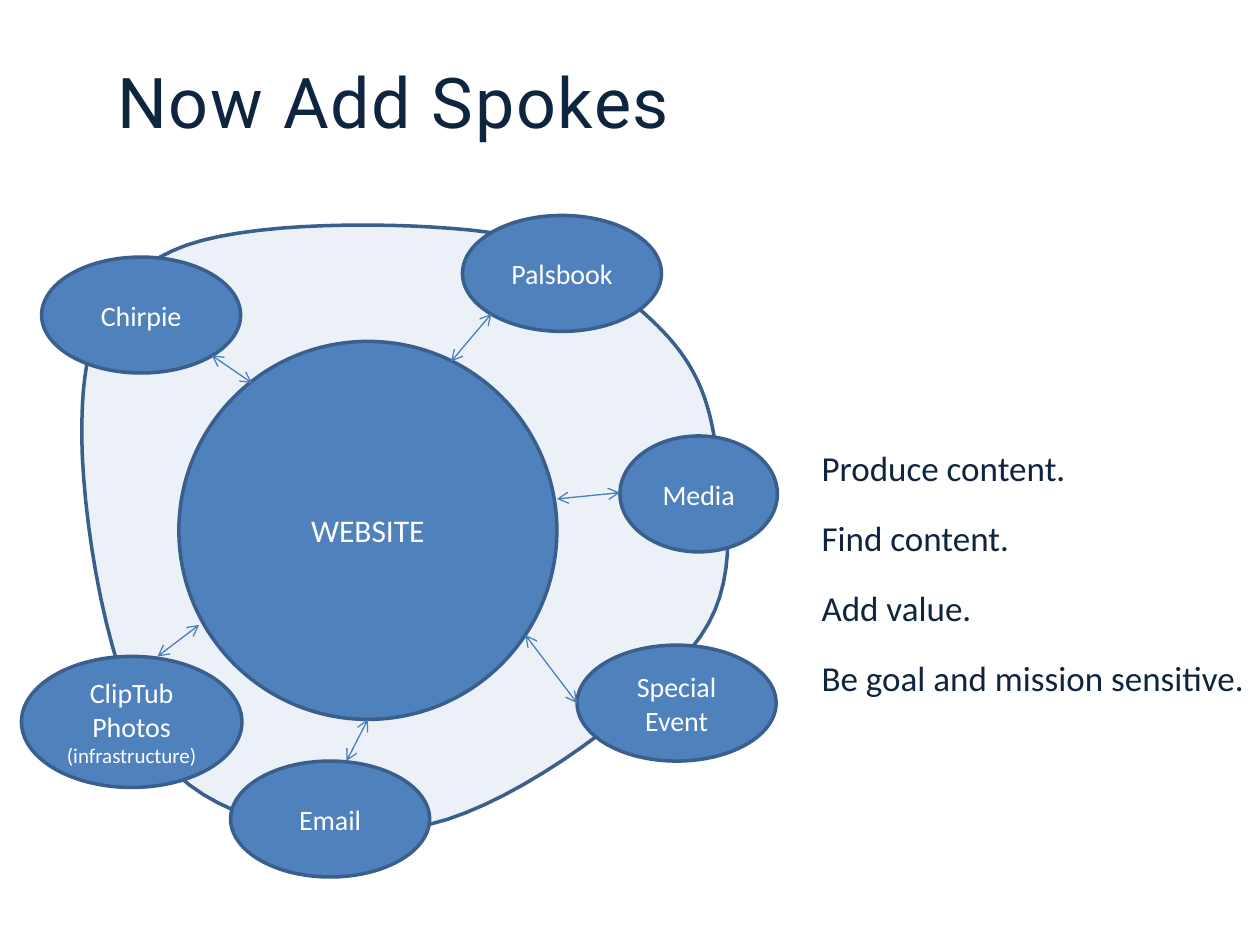
from dataclasses import dataclass

from lxml import etree
from pptx import Presentation
from pptx.dml.color import RGBColor
from pptx.enum.shapes import MSO_CONNECTOR, MSO_SHAPE
from pptx.enum.text import MSO_ANCHOR, MSO_AUTO_SIZE, PP_ALIGN
from pptx.oxml.ns import qn
from pptx.util import Pt

OVAL = MSO_SHAPE.OVAL
LINE = MSO_CONNECTOR.STRAIGHT
MIDDLE, TOP = MSO_ANCHOR.MIDDLE, MSO_ANCHOR.TOP
CENTER, LEFT = PP_ALIGN.CENTER, PP_ALIGN.LEFT
FIXED = MSO_AUTO_SIZE.NONE

SCALE = 9144  # EMU per px, 100 px to the inch
BLUE, EDGE, SPOKE, PALE = "4F81BD", "3A5F8C", "4B7EBC", "DCE6F2"
NAVY, WHITE = "0F243E", "FFFFFF"
STEPS = 16  # straight pieces per curve


@dataclass
class Node:
    box: tuple[int, int, int, int]
    lines: tuple[tuple[str, int], ...]  # text and size of each paragraph


@dataclass
class Spoke:
    start: tuple[int, int]
    end: tuple[int, int]


NODES = [
    Node((33, 204, 158, 92), (("Chirpie", 16),)),
    Node((367, 171, 158, 92), (("Palsbook", 16),)),
    Node((492, 346, 125, 92), (("Media", 16),)),
    Node((458, 512, 158, 92), (("Special Event", 16),)),
    Node((17, 521, 175, 104), (("ClipTub\nPhotos", 16), ("(infrastructure)", 12))),
    Node((142, 271, 300, 300), (("WEBSITE", 18),)),
    Node((183, 604, 158, 92), (("Email", 16),)),
]

SPOKES = [
    Spoke((390, 249), (358, 287)),
    Spoke((168, 282), (200, 304)),
    Spoke((492, 391), (442, 396)),
    Spoke((458, 558), (417, 504)),
    Spoke((275, 604), (292, 571)),
    Spoke((125, 521), (158, 496)),
]

# Rim: a start point, then two handles and an end point per curve
START = (137, 199)
CURVES = [
    ((190, 174), (323, 176), (385, 184)),
    ((446, 191), (476, 219), (506, 244)),
    ((536, 270), (556, 294), (565, 337)),
    ((573, 381), (593, 452), (556, 505)),
    ((519, 558), (413, 637), (342, 654)),
    ((271, 671), (177, 658), (131, 605)),
    ((85, 551), (63, 402), (65, 334)),
    ((66, 267), (83, 224), START),
]

ADVICE = ["Produce content.", "Find content.", "Add value.",
          "Be goal and mission sensitive."]


def px(*vals: float) -> list[int]:
    return [round(v * SCALE) for v in vals]


def rgb(code: str) -> RGBColor:
    return RGBColor.from_string(code)


def paint(shape, fill: str) -> None:
    shape.shadow.inherit = False
    shape.fill.solid()
    shape.fill.fore_color.rgb = rgb(fill)
    shape.line.color.rgb = rgb(EDGE)
    shape.line.width = Pt(2)


def add_run(para, text: str, size: int, color: str, face: str = "Calibri"):
    run = para.add_run()
    run.text = text
    run.font.size = Pt(size)
    run.font.name = face
    run.font.color.rgb = rgb(color)
    return run


def next_para(frame, index: int):
    return frame.add_paragraph() if index else frame.paragraphs[0]


def place(shape, box: tuple[int, int, int, int], anchor):
    shape.left, shape.top, shape.width, shape.height = px(*box)
    frame = shape.text_frame
    frame.word_wrap = True
    frame.auto_size = FIXED
    frame.vertical_anchor = anchor
    return frame


def bend(p0, p1, p2, p3) -> list[list[int]]:
    """Points along one cubic curve, without its start."""
    points = []
    for step in range(1, STEPS + 1):
        t = step / STEPS
        u = 1 - t
        points.append(px(*(u**3 * a + 3 * u * u * t * b + 3 * u * t * t * c + t**3 * d
                           for a, b, c, d in zip(p0, p1, p2, p3))))
    return points


def draw_rim(slide) -> None:
    path = slide.shapes.build_freeform(*px(*START), scale=1.0)
    last, points = START, []
    for curve in CURVES:
        points += bend(last, *curve)
        last = curve[-1]
    path.add_line_segments(points, close=True)
    rim = path.convert_to_shape()
    paint(rim, PALE)
    color = rim.fill._xPr.find(qn("a:solidFill"))[0]
    etree.SubElement(color, qn("a:alpha"), val="53000")


def draw_node(slide, node: Node) -> None:
    oval = slide.shapes.add_shape(OVAL, *px(*node.box))
    paint(oval, BLUE)
    frame = place(oval, node.box, MIDDLE)
    for i, (text, size) in enumerate(node.lines):
        para = next_para(frame, i)
        para.alignment = CENTER
        for j, part in enumerate(text.split("\n")):
            if j:
                para.add_line_break()
            add_run(para, part, size, WHITE)


def draw_spoke(slide, spoke: Spoke) -> None:
    link = slide.shapes.add_connector(LINE, *px(*spoke.start, *spoke.end))
    link.line.color.rgb = rgb(SPOKE)
    link.line.width = Pt(0.75)
    edge = link.line._get_or_add_ln()
    for tag in ("a:headEnd", "a:tailEnd"):
        etree.SubElement(edge, qn(tag), type="arrow")
    etree.SubElement(link._element.spPr, qn("a:effectLst"))


def write_title(slide) -> None:
    frame = place(slide.shapes.title, (83, -8, 475, 175), MIDDLE)
    para = frame.paragraphs[0]
    para.alignment = LEFT
    run = add_run(para, "Now Add Spokes", 40, NAVY, "Roboto")
    run.font._element.set("spc", "100")


def write_list(slide) -> None:
    frame = place(slide.placeholders[1], (642, 333, 367, 233), TOP)
    for i, text in enumerate(ADVICE):
        para = next_para(frame, i)
        para.line_spacing = 1.5
        etree.SubElement(para._p.get_or_add_pPr(), qn("a:buNone"))
        add_run(para, text, 20, NAVY)


def main() -> None:
    deck = Presentation()
    deck.slide_width, deck.slide_height = px(1000, 750)
    slide = deck.slides.add_slide(deck.slide_layouts[1])

    # Wheel: rim, hub and nodes, then spokes
    draw_rim(slide)
    for node in NODES:
        draw_node(slide, node)
    for spoke in SPOKES:
        draw_spoke(slide, spoke)

    # Text beside and above the wheel
    write_title(slide)
    write_list(slide)
    deck.save("out.pptx")


if __name__ == "__main__":
    main()
